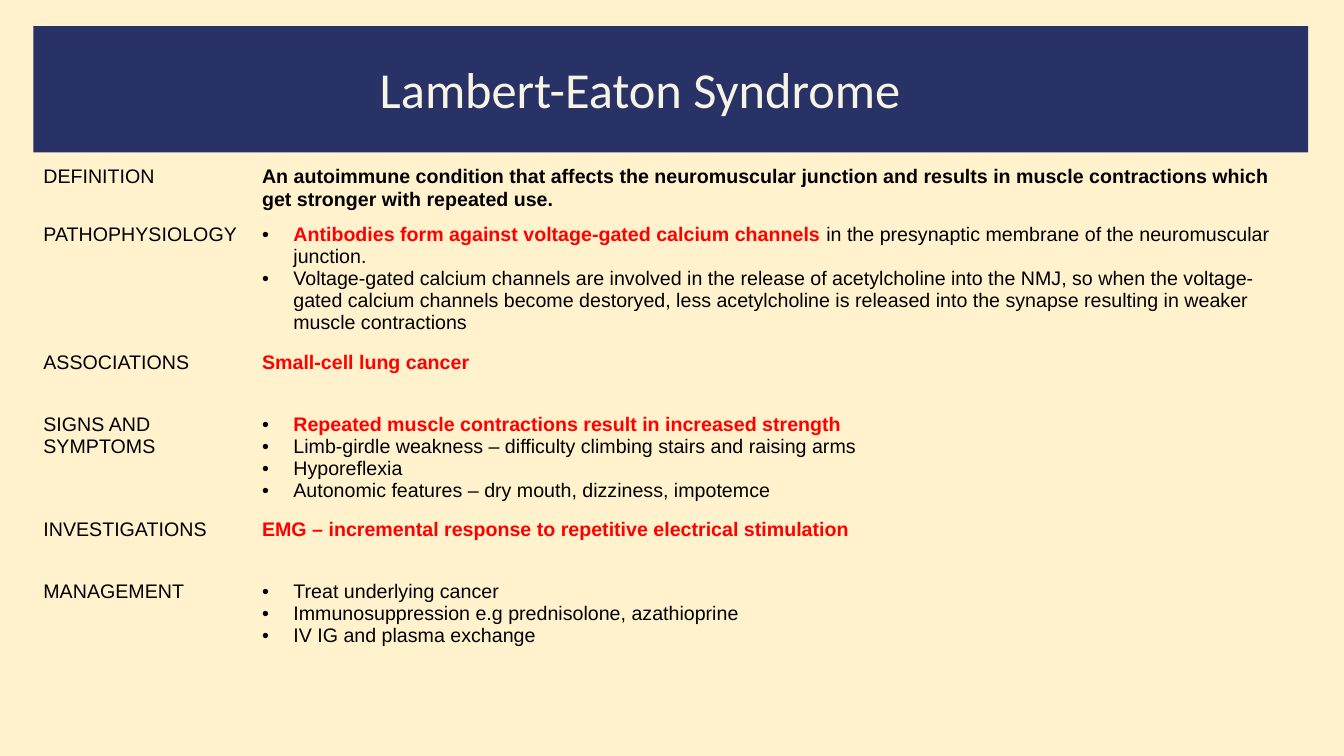
"""Builds a one-slide clinical summary of Lambert-Eaton syndrome."""
from lxml import etree
from pptx import Presentation
from pptx.dml.color import RGBColor
from pptx.enum import shapes
from pptx.oxml import ns
from pptx.util import Cm, Pt

CREAM, NAVY, IVORY, BLACK, RED = "FFF2CC", "293267", "F8F4E4", "000000", "FF0000"
PLAIN, STRONG, KEY = (BLACK, False), (BLACK, True), (RED, True)
NO_GRID_STYLE = "{2D5ABB26-0587-4C30-8999-92F81FD0307C}"
COLUMN_WIDTHS = (5.51, 26.59)

# Each row: label, height in cm, bulleted, paragraphs made of (text, style) spans
ROWS = [
    ("DEFINITION", 1.44, False, [
        [("An autoimmune condition that affects the neuromuscular junction and results in "
          "muscle contractions which get stronger with repeated use.", STRONG)]]),
    ("PATHOPHYSIOLOGY", 3.23, True, [
        [("Antibodies form against voltage-gated calcium channels ", KEY),
         ("in the presynaptic membrane of the neuromuscular junction.", PLAIN)],
        [("Voltage-gated calcium channels are involved in the release of acetylcholine into "
          "the NMJ, so when the voltage-gated calcium channels become destoryed, less "
          "acetylcholine is released into the synapse resulting in weaker muscle "
          "contractions", PLAIN)]]),
    ("ASSOCIATIONS", 1.56, False, [[("Small-cell lung cancer", KEY)]]),
    ("SIGNS AND SYMPTOMS", 2.65, True, [
        [("Repeated muscle contractions result in increased strength", KEY)],
        [("Limb-girdle weakness – difficulty climbing stairs and raising arms", PLAIN)],
        [("Hyporeflexia", PLAIN)],
        [("Autonomic features – dry mouth, dizziness, impotemce", PLAIN)]]),
    ("INVESTIGATIONS", 1.56, False, [
        [("EMG – incremental response to repetitive electrical stimulation", KEY)]]),
    ("MANAGEMENT", 2.0, True, [
        [("Treat underlying cancer", PLAIN)],
        [("Immunosuppression e.g prednisolone, azathioprine", PLAIN)],
        [("IV IG and plasma exchange", PLAIN)]]),
]


def paint(color, value):
    """Set a colour format or fill from a hex string."""
    if hasattr(color, "solid"):
        color.solid()
        color = color.fore_color
    color.rgb = RGBColor.from_string(value)


def style_font(font, name, size, color, bold=False):
    """Set the face, size, colour and weight of a font."""
    font.name, font.size, font.bold = name, Pt(size), bold
    paint(font.color, color)


def add_bullet(para):
    """Give a paragraph a black round bullet with a hanging indent."""
    properties = para._p.get_or_add_pPr()
    properties.set("marL", str(Cm(0.79)))
    properties.set("indent", str(-Cm(0.79)))
    color = etree.SubElement(properties, ns.qn("a:buClr"))
    etree.SubElement(color, ns.qn("a:srgbClr"), val=BLACK)
    etree.SubElement(properties, ns.qn("a:buFont"), typeface="Arial")
    etree.SubElement(properties, ns.qn("a:buChar"), char="•")


def fill_cell(cell, paragraphs, bulleted=False):
    """Write styled paragraphs into an unfilled table cell."""
    cell.fill.background()
    frame = cell.text_frame
    for index, spans in enumerate(paragraphs):
        para = frame.add_paragraph() if index else frame.paragraphs[0]
        if bulleted:
            add_bullet(para)
        for words, (color, bold) in spans:
            span = para.add_run()
            span.text = words
            style_font(span.font, "Arial", 14, color, bold)


def add_title(page, title):
    """Draw the navy banner and the title over it."""
    banner = page.shapes.add_shape(
        shapes.MSO_SHAPE.RECTANGLE, Cm(0.84), Cm(0.66), Cm(32.13), Cm(3.18))
    banner.shadow.inherit = False
    paint(banner.fill, NAVY)
    banner.line.fill.background()
    box = page.shapes.add_textbox(Cm(9.32), Cm(1.35), Cm(16.59), Cm(1.8))
    box.text_frame.word_wrap = True
    box.text_frame.text = title
    style_font(box.text_frame.paragraphs[0].runs[0].font, "Calibri", 36, IVORY)


def add_summary(page):
    """Add the table of headings and findings."""
    table = page.shapes.add_table(
        len(ROWS), len(COLUMN_WIDTHS), Cm(0.84), Cm(4.06),
        Cm(sum(COLUMN_WIDTHS)), Cm(sum(row[1] for row in ROWS))).table
    table.first_row = table.horz_banding = False
    table._tbl.tblPr.find(ns.qn("a:tableStyleId")).text = NO_GRID_STYLE
    for column, width in zip(table.columns, COLUMN_WIDTHS):
        column.width = Cm(width)
    for index, (label, height, bulleted, paragraphs) in enumerate(ROWS):
        table.rows[index].height = Cm(height)
        fill_cell(table.cell(index, 0), [[(label, PLAIN)]])
        fill_cell(table.cell(index, 1), paragraphs, bulleted)


def main():
    """Build and save the deck."""
    deck = Presentation()
    deck.slide_width, deck.slide_height = Cm(33.87), Cm(19.05)
    page = deck.slides.add_slide(deck.slide_layouts[6])
    paint(page.background.fill, CREAM)
    add_title(page, "Lambert-Eaton Syndrome")
    add_summary(page)
    deck.save("out.pptx")


if __name__ == "__main__":
    main()
